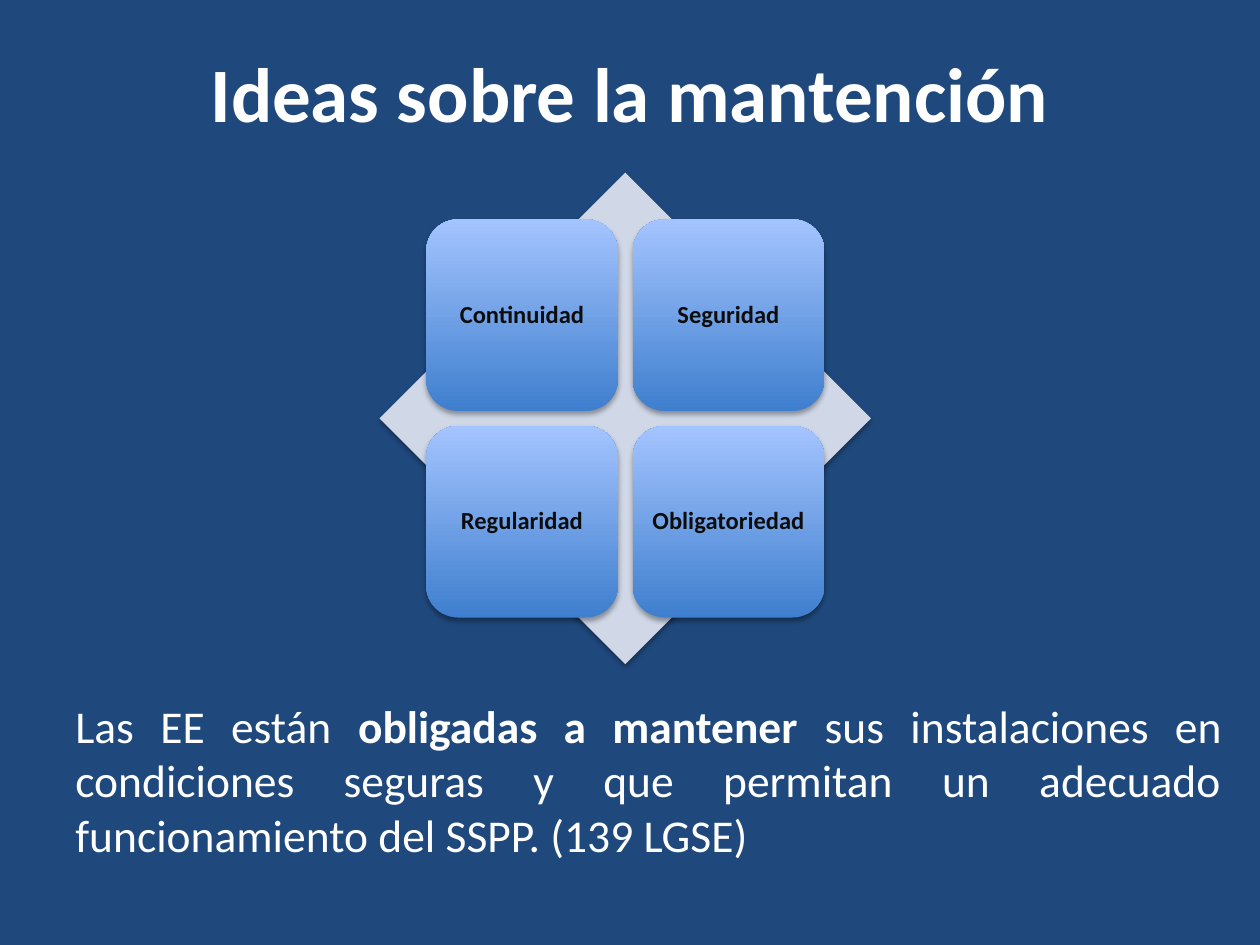
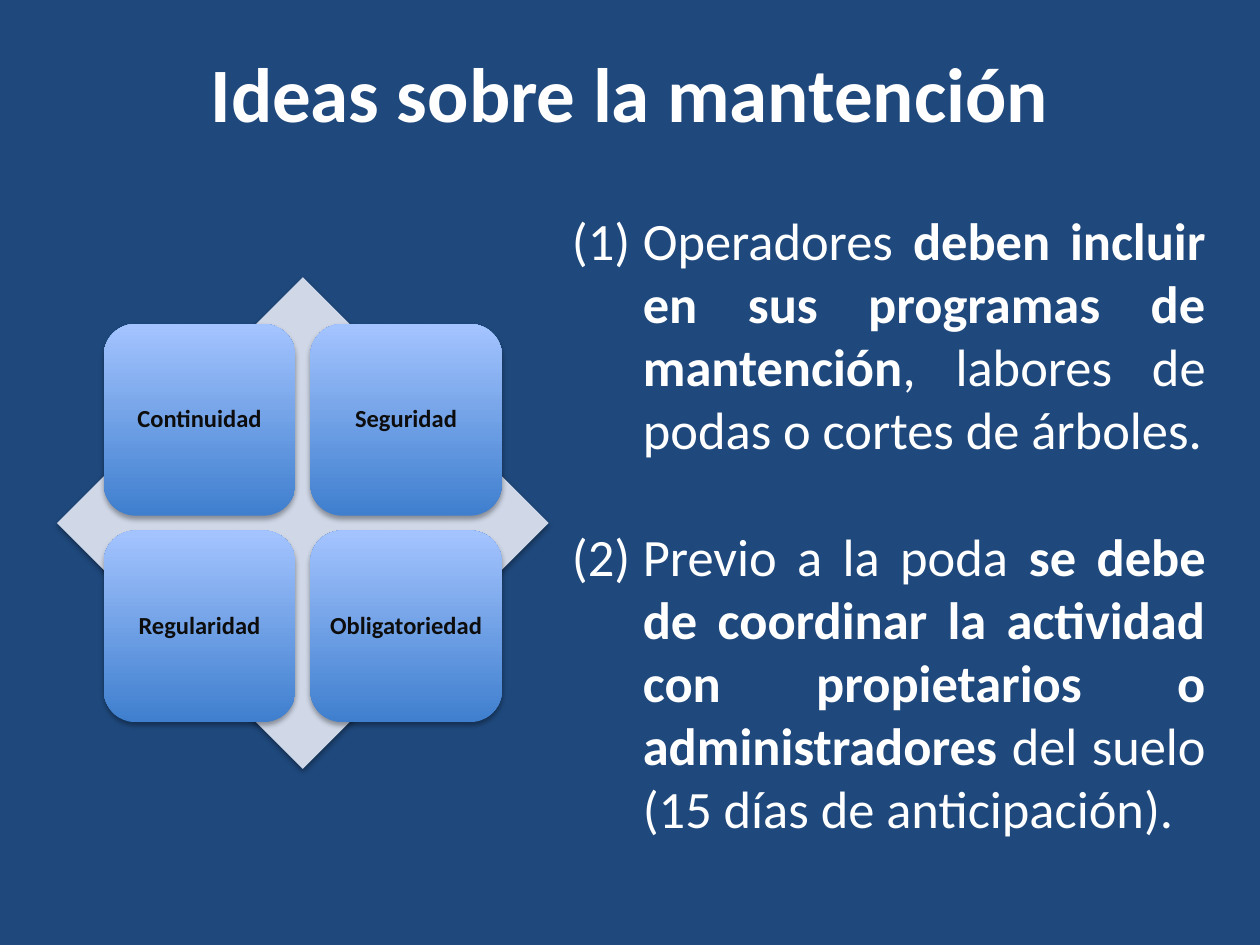
"""Build two slides on the principles of network upkeep."""
from dataclasses import dataclass
from typing import Any

from lxml import etree
from pptx import Presentation
from pptx.dml.color import RGBColor
from pptx.enum.shapes import MSO_SHAPE
from pptx.enum.text import MSO_ANCHOR, MSO_AUTO_SIZE, PP_ALIGN
from pptx.oxml.ns import qn
from pptx.util import Cm, Pt

DIAMOND = MSO_SHAPE.DIAMOND
ROUND = MSO_SHAPE.ROUNDED_RECTANGLE
MIDDLE, TOP = MSO_ANCHOR.MIDDLE, MSO_ANCHOR.TOP
GROW, FIXED = MSO_AUTO_SIZE.SHAPE_TO_FIT_TEXT, MSO_AUTO_SIZE.NONE
CENTER, JUSTIFY = PP_ALIGN.CENTER, PP_ALIGN.JUSTIFY

COLORS = {
    "back": "1F497D",
    "white": "FFFFFF",
    "ink": "0D0D0D",
    "pale": "D0D8E8",
    "deep": "3F7FCE",
    "light": "A4C4FF",
    "shade": "000000",
}
FONT = "Calibri"
TITLE = "Ideas sobre la mantención"
IDEAS = ("Continuidad", "Seguridad", "Regularidad", "Obligatoriedad")
SIDE = 9.91
PAD = 0.095 * SIDE
TILE = 0.39 * SIDE
STEP = SIDE - 2 * PAD - TILE
INDENT = 1.43

TITLE_FRAME = {"word_wrap": True, "auto_size": FIXED, "vertical_anchor": MIDDLE}
BODY_FRAME = {"word_wrap": True, "auto_size": GROW, "vertical_anchor": TOP}
INSET = Cm(0.15)
TILE_FRAME = TITLE_FRAME | {
    "margin_left": INSET,
    "margin_top": INSET,
    "margin_right": INSET,
    "margin_bottom": INSET,
}


@dataclass(frozen=True)
class Run:
    """A stretch of text in one weight."""
    text: str
    bold: bool = False


@dataclass(frozen=True)
class Block:
    """A text box with its paragraphs and format."""
    box: tuple[float, float, float, float]
    paras: tuple[tuple[Run, ...], ...]
    size: float
    align: Any = JUSTIFY
    frame: Any = None
    listed: bool = False


@dataclass(frozen=True)
class Page:
    """The place of the idea chart and the body text of a slide."""
    left: float
    top: float
    body: Block


HEAD = Block((1.27, 0.76, 22.86, 2.16), ((Run(TITLE, True),),), 44, CENTER, TITLE_FRAME)

PAGES = (
    Page(7.65, 3.48, Block(
        (1.27, 13.94, 23.62, 3.58),
        ((
            Run("Las EE están "),
            Run("obligadas a mantener", True),
            Run(" sus instalaciones en condiciones seguras y que permitan "
                "un adecuado funcionamiento del SSPP. (139 LGSE)"),
        ),),
        26, frame=BODY_FRAME)),
    Page(1.15, 5.59, Block(
        (11.28, 4.06, 13.28, 13.08),
        (
            (
                Run("Operadores "),
                Run("deben incluir en sus programas de mantención", True),
                Run(", labores de podas o cortes de árboles."),
            ),
            (
                Run("Previo a la poda "),
                Run("se debe de coordinar la actividad con propietarios "
                    "o administradores", True),
                Run(" del suelo (15 días de anticipación)."),
            ),
        ),
        30, frame=BODY_FRAME, listed=True)),
)


def rgb(name: str) -> RGBColor:
    """Return a named colour."""
    return RGBColor.from_string(COLORS[name])


def style(item: Any, values: dict[str, Any]) -> None:
    """Set each format value on an item."""
    for key, value in values.items():
        setattr(item, key, value)


def write(para: Any, run: Run, size: float, color: str) -> None:
    """Add a run to a paragraph."""
    part = para.add_run()
    part.text = run.text
    style(part.font, {"name": FONT, "size": Pt(size), "bold": run.bold})
    part.font.color.rgb = rgb(color)


def number(para: Any) -> None:
    """Give a paragraph a hanging number in brackets."""
    props = para._p.get_or_add_pPr()
    props.set("marL", str(Cm(INDENT)))
    props.set("indent", str(-Cm(INDENT)))
    etree.SubElement(props, qn("a:buFont"), typeface="+mj-lt")
    etree.SubElement(props, qn("a:buAutoNum"), type="arabicParenBoth")


def draw_block(slide: Any, block: Block) -> None:
    """Draw a text box."""
    frame = slide.shapes.add_textbox(*map(Cm, block.box)).text_frame
    style(frame, block.frame)
    for index, runs in enumerate(block.paras):
        para = frame.add_paragraph() if index else frame.paragraphs[0]
        para.alignment = block.align
        if block.listed:
            if index < len(block.paras) - 1:
                para.space_after = Pt(block.size * 1.22)
            number(para)
        for run in runs:
            write(para, run, block.size, "white")


def add_shade(shape: Any) -> None:
    """Give a shape a soft shadow below it."""
    shape.shadow.inherit = False
    effects = shape._element.spPr.find(qn("a:effectLst"))
    outer = etree.SubElement(effects, qn("a:outerShdw"), blurRad=str(Pt(3.1)),
                             dist=str(Pt(1.8)), dir="5400000", rotWithShape="0")
    color = etree.SubElement(outer, qn("a:srgbClr"), val=COLORS["shade"])
    etree.SubElement(color, qn("a:alpha"), val="35000")


def add_form(group: Any, kind: Any, left: float, top: float, side: float) -> Any:
    """Add a square shape without outline to a group."""
    shape = group.shapes.add_shape(kind, Cm(left), Cm(top), Cm(side), Cm(side))
    shape.line.fill.background()
    add_shade(shape)
    return shape


def draw_tile(group: Any, idea: str, left: float, top: float) -> None:
    """Draw a rounded tile that names an idea."""
    tile = add_form(group, ROUND, left, top, TILE)
    tile.fill.gradient()
    tile.fill.gradient_angle = 90
    for stop, place, name in zip(tile.fill.gradient_stops, (0, 1), ("deep", "light")):
        stop.position = place
        stop.color.rgb = rgb(name)
    style(tile.text_frame, TILE_FRAME)
    para = tile.text_frame.paragraphs[0]
    style(para, {"alignment": CENTER, "line_spacing": 0.9})
    write(para, Run(idea, True), 14, "ink")


def draw_chart(slide: Any, left: float, top: float) -> None:
    """Draw the four ideas over a diamond."""
    group = slide.shapes.add_group_shape()
    base = add_form(group, DIAMOND, left, top, SIDE)
    base.fill.solid()
    base.fill.fore_color.rgb = rgb("pale")
    for index, idea in enumerate(IDEAS):
        row, col = divmod(index, 2)
        draw_tile(group, idea, left + PAD + col * STEP, top + PAD + row * STEP)


def main() -> None:
    """Build and save the deck."""
    deck = Presentation()
    style(deck, {"slide_width": Cm(25.4), "slide_height": Cm(19.05)})
    for page in PAGES:
        slide = deck.slides.add_slide(deck.slide_layouts[6])
        fill = slide.background.fill
        fill.solid()
        fill.fore_color.rgb = rgb("back")
        draw_block(slide, HEAD)
        draw_chart(slide, page.left, page.top)
        draw_block(slide, page.body)
    deck.save("out.pptx")


if __name__ == "__main__":
    main()
